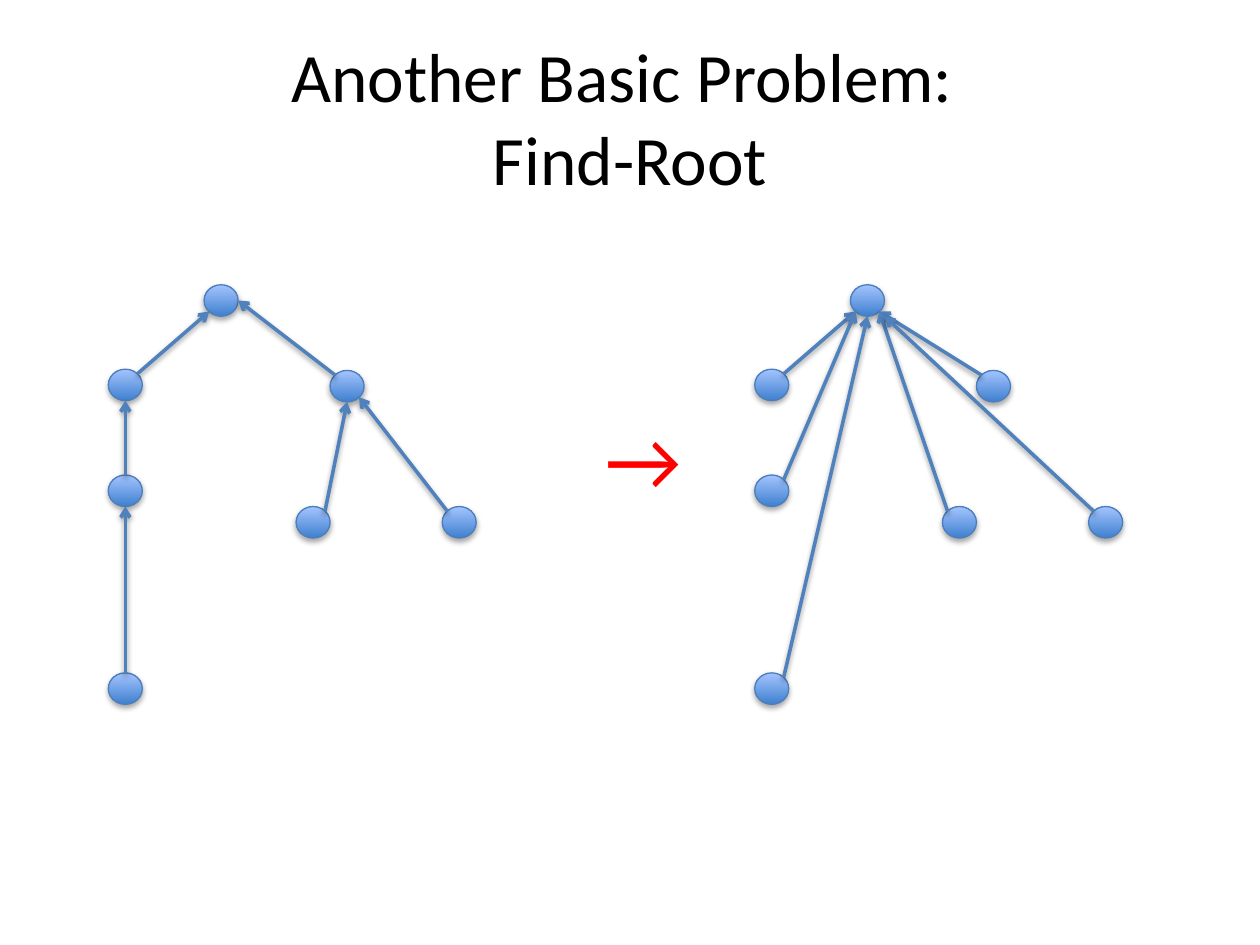
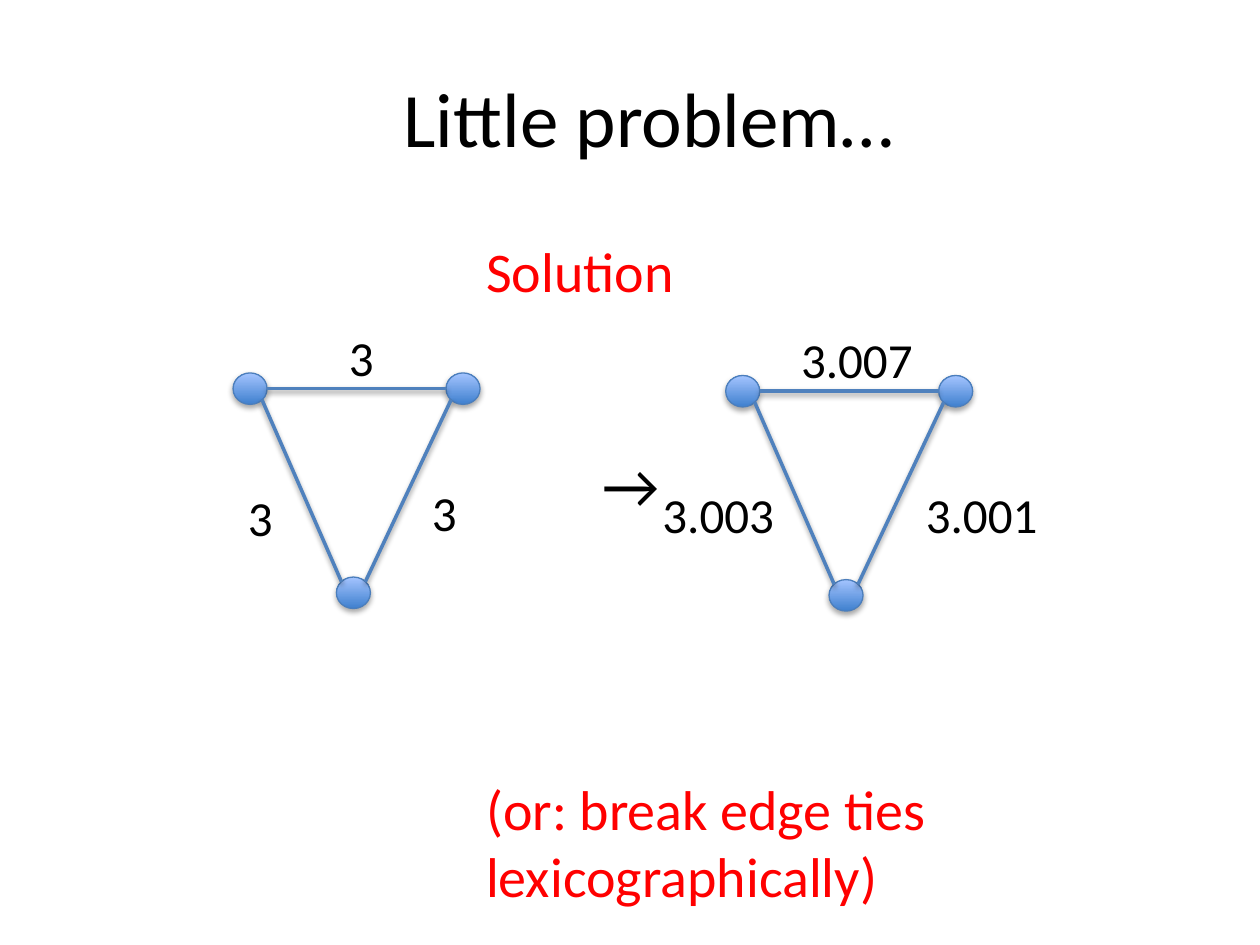
"""Build two slides on find-root trees and tie-breaking edge weights."""
from pptx import Presentation
from pptx import util as u
from pptx.dml.color import RGBColor
from pptx.enum import shapes, text
from pptx.oxml import parse_xml
from pptx.oxml.ns import nsdecls

BLACK = RGBColor(0x00, 0x00, 0x00)
RED = RGBColor(0xFF, 0x00, 0x00)
NODE_DARK = RGBColor(0x3F, 0x80, 0xCE)
NODE_LIGHT = RGBColor(0xA4, 0xC4, 0xFF)
NODE_LINE = RGBColor(0x4B, 0x7E, 0xBC)
EDGE_COLOR = RGBColor(0x4F, 0x81, 0xBD)
FONT = "Calibri"
NODE_WIDTH, NODE_HEIGHT = 0.27, 0.25
SHADOW = (
    "<a:effectLst %s><a:outerShdw blurRad='40000' dist='%d' dir='5400000' rotWithShape='0'>"
    "<a:srgbClr val='000000'><a:alpha val='%d'/></a:srgbClr></a:outerShdw></a:effectLst>"
)
SITES = {
    "top": (0, -1), "bottom": (0, 1), "left": (-1, 0), "right": (1, 0),
    "top left": (-0.7, -0.7), "top right": (0.7, -0.7),
    "bottom left": (-0.7, 0.7), "bottom right": (0.7, 0.7), "corner": (1, 1),
}


def write(page, lines, left, top, width, height, size, color=BLACK, title=False):
    """Add a text box with one paragraph per line and return its paragraphs."""
    box = page.shapes.add_textbox(*map(u.Inches, (left, top, width, height)))
    frame = box.text_frame
    frame.word_wrap = title
    frame.vertical_anchor = text.MSO_ANCHOR.MIDDLE if title else text.MSO_ANCHOR.TOP
    frame.text = "\n".join(lines)
    for para in frame.paragraphs:
        para.alignment = text.PP_ALIGN.CENTER if title else text.PP_ALIGN.LEFT
        para.font.name = FONT
        para.font.size = u.Pt(size)
        para.font.color.rgb = color
    return frame.paragraphs


def draw_graph(page, nodes, edges, shift_x=0, shift_y=0, arrows=False):
    """Draw shaded nodes and the edges that join their sites."""
    for left, top in nodes.values():
        node = page.shapes.add_shape(
            shapes.MSO_SHAPE.OVAL, u.Inches(left + shift_x), u.Inches(top + shift_y),
            u.Inches(NODE_WIDTH), u.Inches(NODE_HEIGHT))
        node.fill.gradient()
        node.fill.gradient_angle = 90
        for stop, color, position in zip(node.fill.gradient_stops, (NODE_DARK, NODE_LIGHT), (0, 1)):
            stop.color.rgb = color
            stop.position = position
        node.line.color.rgb = NODE_LINE
        node.line.width = u.Pt(0.75)
        node._element.spPr.append(parse_xml(SHADOW % (nsdecls("a"), 23000, 35000)))
    for start, start_site, end, end_site in edges:
        points = []
        for name, site in ((start, start_site), (end, end_site)):
            left, top = nodes[name]
            across, down = SITES[site]
            points.append(u.Inches(left + shift_x + NODE_WIDTH / 2 * (1 + across)))
            points.append(u.Inches(top + shift_y + NODE_HEIGHT / 2 * (1 + down)))
        edge = page.shapes.add_connector(shapes.MSO_CONNECTOR.STRAIGHT, *points)
        edge.line.color.rgb = EDGE_COLOR
        edge.line.width = u.Pt(2)
        if arrows:
            edge.get_or_add_ln().append(parse_xml("<a:tailEnd %s type='arrow'/>" % nsdecls("a")))
        edge._element.spPr.append(parse_xml(SHADOW % (nsdecls("a"), 20000, 38000)))


deck = Presentation()
deck.slide_width, deck.slide_height = u.Inches(10), u.Inches(7.5)
blank = deck.slide_layouts[6]

page = deck.slides.add_slide(blank)
write(page, ["Another Basic Problem: \vFind-Root"], 0.5, 0.3, 9, 1.25, 39.6, title=True)
tree = {
    "root": (1.62, 2.26), "left child": (0.86, 2.93), "right child": (2.62, 2.94),
    "left grandchild": (0.86, 3.77), "inner leaf": (2.35, 4.02),
    "deep leaf": (0.86, 5.34), "outer leaf": (3.51, 4.02),
}
parent_edges = [
    ("deep leaf", "top", "left grandchild", "bottom"),
    ("inner leaf", "top right", "right child", "bottom"),
    ("outer leaf", "top left", "right child", "bottom right"),
    ("left grandchild", "top", "left child", "bottom"),
    ("left child", "top right", "root", "bottom left"),
    ("right child", "top left", "root", "right"),
]
root_edges = [
    ("deep leaf", "top right", "root", "bottom"),
    ("left child", "top right", "root", "bottom left"),
    ("left grandchild", "top right", "root", "bottom left"),
    ("right child", "top left", "root", "bottom right"),
    ("inner leaf", "top left", "root", "bottom right"),
    ("outer leaf", "top left", "root", "corner"),
]
draw_graph(page, tree, parent_edges, arrows=True)
draw_graph(page, tree, root_edges, shift_x=5.13, arrows=True)
write(page, ["→"], 4.71, 3.18, 0.86, 0.91, 48, RED)

page = deck.slides.add_slide(blank)
write(page, ["Little problem…"], 0.65, 0.3, 9, 1.25, 44, title=True)
triangle = {"left": (1.85, 2.96), "right": (3.54, 2.96), "bottom": (2.67, 4.58)}
sides = [
    ("left", "right", "right", "left"),
    ("right", "bottom left", "bottom", "top right"),
    ("left", "bottom right", "bottom", "top left"),
]
draw_graph(page, triangle, sides)
draw_graph(page, triangle, sides, shift_x=3.91, shift_y=0.02)
weights = [
    ("3", 2.67, 2.55, 0.4), ("3", 1.87, 3.82, 0.4), ("3", 3.33, 3.78, 0.4),
    ("3.007", 6.26, 2.57, 1.1), ("3.003", 5.16, 3.8, 1.1), ("3.001", 7.25, 3.8, 1.1),
]
for weight, left, top, width in weights:
    write(page, [weight], left, top, width, 0.57, 28)
write(page, ["→"], 4.68, 3.49, 0.7, 0.71, 36)
solution = ["Solution", "(or: break edge ties", "lexicographically)"]
paras = write(page, solution, 3.76, 1.83, 3.73, 5.49, 32, RED)
paras[1].space_before = u.Pt(269)

deck.save("out.pptx")
